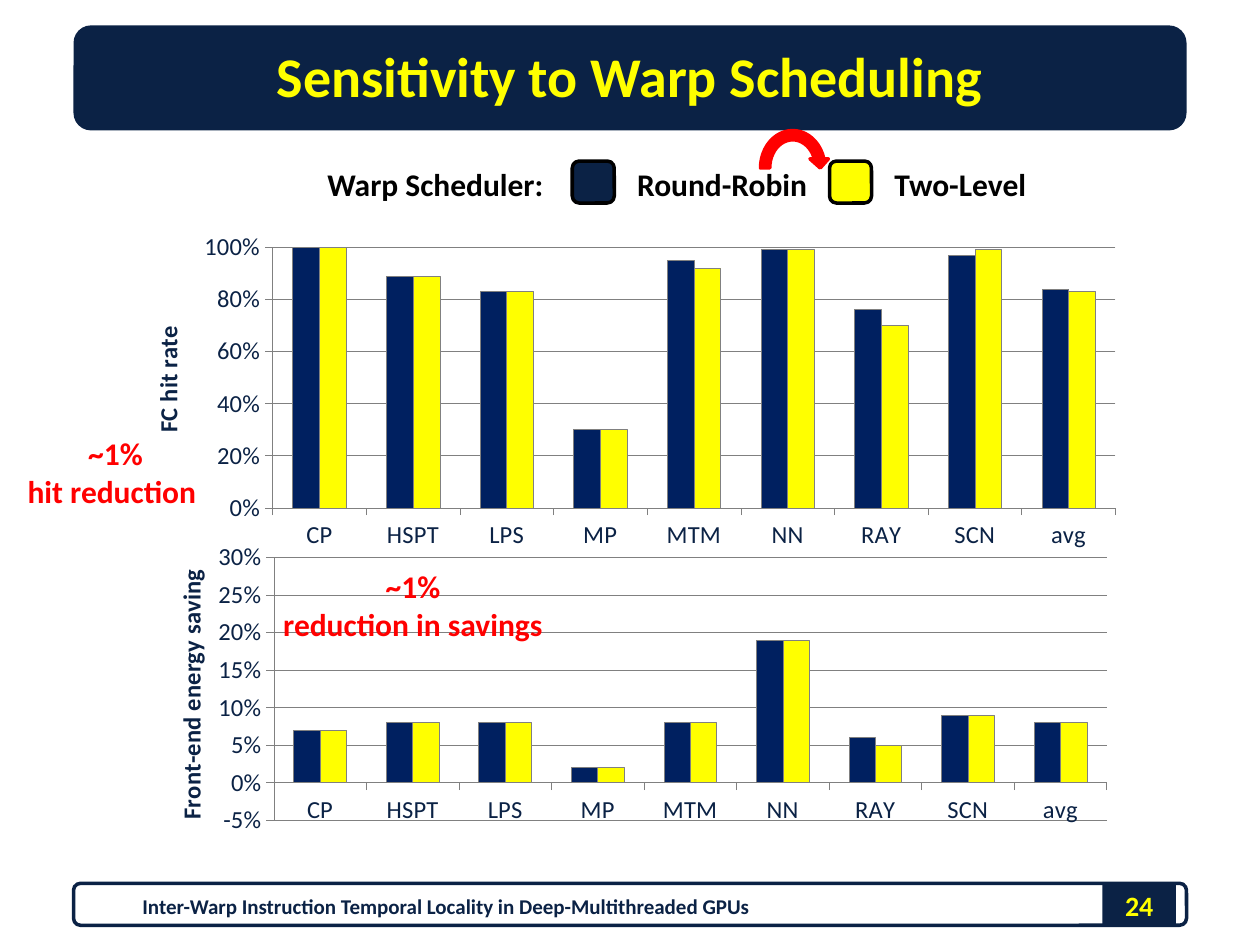
from lxml import etree
from pptx import Presentation
from pptx.chart.data import CategoryChartData
from pptx.dml.color import RGBColor
from pptx.enum.chart import XL_CHART_TYPE as ChartType, XL_TICK_MARK as TickMark
from pptx.enum.shapes import MSO_SHAPE as Shape
from pptx.enum.text import MSO_ANCHOR as Anchor, PP_ALIGN as Align
from pptx.oxml import parse_xml
from pptx.oxml.ns import nsdecls, qn
from pptx.util import Pt

NAVY, YELLOW, RED, BLACK = "0B2245", "FFFF00", "FF0000", "000000"
BAR_COLORS = ("002060", YELLOW)
GRAY = "808080"
FONT = "Calibri"
BENCHMARKS = ("CP", "HSPT", "LPS", "MP", "MTM", "NN", "RAY", "SCN", "avg")

HIT_RATE = {
    "title": "FC hit rate",
    "title_place": (0.01, 0.28),
    "scale": {"minimum_scale": 0, "maximum_scale": 1, "major_unit": 0.2},
    "plot": (0.139, 0.051, 0.861, 0.801),
    "values": ((1, 0.89, 0.83, 0.3, 0.95, 0.99, 0.76, 0.97, 0.84),
               (1, 0.89, 0.83, 0.3, 0.92, 0.99, 0.7, 0.99, 0.83)),
}
ENERGY_SAVING = {
    "title": "Front-end energy saving",
    "title_place": (0.02, 0.07),
    "scale": {"minimum_scale": -0.05, "maximum_scale": 0.3, "major_unit": 0.05},
    "plot": (0.129, 0.046, 0.871, 0.807),
    "values": ((0.07, 0.08, 0.08, 0.02, 0.08, 0.19, 0.06, 0.09, 0.08),
               (0.07, 0.08, 0.08, 0.02, 0.08, 0.19, 0.05, 0.09, 0.08)),
}


def color(value):
    return RGBColor.from_string(value)


def points(box):
    return [Pt(length) for length in box]


def set_font(font, size, tint, bold=True):
    values = {"name": FONT, "size": Pt(size), "bold": bold}
    for name, value in values.items():
        setattr(font, name, value)
    font.color.rgb = color(tint)


def set_line(line, tint, width):
    line.color.rgb = color(tint)
    line.width = Pt(width)


def add_block(page, kind, box, fill=None, line=None):
    block = page.shapes.add_shape(kind, *points(box))
    block.shadow.inherit = False
    if fill:
        block.fill.solid()
        block.fill.fore_color.rgb = color(fill)
    else:
        block.fill.background()
    if line:
        set_line(block.line, line, 2)
    else:
        block.line.fill.background()
    return block


def add_text(page, box, lines, size, tint, align=Align.LEFT, anchor=Anchor.TOP, wrap=False):
    frame = page.shapes.add_textbox(*points(box)).text_frame
    frame.word_wrap = wrap
    frame.vertical_anchor = anchor
    for index, line in enumerate(lines):
        para = frame.paragraphs[0] if index == 0 else frame.add_paragraph()
        para.alignment = align
        span = para.add_run()
        span.text = line
        set_font(span.font, size, tint)


def add_header(page, box):
    left, top, width, height = box
    add_block(page, Shape.ROUNDED_RECTANGLE, box, NAVY)
    add_text(page, (left - 6, top - 2.5, width + 12, height + 2),
             ["Sensitivity to Warp Scheduling"], 32, YELLOW,
             Align.CENTER, Anchor.MIDDLE, True)


def add_footer(page, box):
    left, top, width, height = box
    number_left = left + width - 48
    add_block(page, Shape.RECTANGLE, (number_left, top - 0.5, 42, height), NAVY)
    add_block(page, Shape.ROUNDED_RECTANGLE, box, line=NAVY)
    add_text(page, (number_left - 6, top - 2, 54, 29), ["24"], 16, YELLOW,
             Align.CENTER, Anchor.MIDDLE, True)
    add_text(page, (left + 12, top - 1.5, 402, 29),
             ["Inter-Warp Instruction Temporal Locality in Deep-Multithreaded GPUs"],
             12, NAVY, Align.CENTER, Anchor.MIDDLE, True)


def add_legend(page, box):
    left, top, width, height = box
    add_text(page, (left, top, 139, height), ["Warp Scheduler:"], 18, BLACK)
    entries = ((147, NAVY, "Round-Robin", 112), (294, YELLOW, "Two-Level", 90))
    for offset, fill, label, label_width in entries:
        add_block(page, Shape.ROUNDED_RECTANGLE,
                  (left + offset, top + 1.5, 24, 24), fill, BLACK)
        add_text(page, (left + offset + 30, top, label_width, height), [label], 18, BLACK)


def make_layout(settings):
    layout = parse_xml(f"<c:layout {nsdecls('c')}/>")
    manual = etree.SubElement(layout, qn("c:manualLayout"))
    for name, value in settings:
        etree.SubElement(manual, qn(f"c:{name}")).set("val", str(value))
    return layout


def replace_layout(parent, layout, position):
    for old in parent.findall(qn("c:layout")):
        parent.remove(old)
    parent.insert(position, layout)


def add_bar_chart(page, box, content):
    data = CategoryChartData(number_format="0%")
    data.categories = BENCHMARKS
    for index, values in enumerate(content["values"], 1):
        data.add_series(f"Series {index}", values)
    chart = page.shapes.add_chart(ChartType.COLUMN_CLUSTERED, *points(box), data).chart
    chart.has_legend = False
    chart.has_title = False
    set_font(chart.font, 14, NAVY, False)
    edges = [("xMode", "edge"), ("yMode", "edge")]
    replace_layout(chart._chartSpace.chart.plotArea, make_layout(
        [("layoutTarget", "inner"), *edges, *zip("xywh", content["plot"])]), 0)

    # Bars
    plot = chart.plots[0]
    for name, value in {"gap_width": 150, "overlap": 0, "vary_by_categories": False}.items():
        setattr(plot, name, value)
    for series, fill in zip(plot.series, BAR_COLORS):
        series.invert_if_negative = False
        series.format.fill.solid()
        series.format.fill.fore_color.rgb = color(fill)
        set_line(series.format.line, GRAY, 0.25)

    # Axes
    value_axis = chart.value_axis
    for axis in (chart.category_axis, value_axis):
        axis.major_tick_mark = TickMark.OUTSIDE
        axis.minor_tick_mark = TickMark.NONE
        set_line(axis.format.line, GRAY, 0.25)
    for name, value in content["scale"].items():
        setattr(value_axis, name, value)
    value_axis.has_major_gridlines = True
    set_line(value_axis.major_gridlines.format.line, GRAY, 0.25)
    value_axis.tick_labels.number_format = "0%"
    value_axis.tick_labels.number_format_is_linked = False

    # Axis title
    title = value_axis.axis_title
    title.text_frame.text = content["title"]
    set_font(title.text_frame.paragraphs[0].runs[0].font, 14, NAVY)
    replace_layout(title._element, make_layout(
        [*edges, *zip("xy", content["title_place"])]), 1)


def main():
    deck = Presentation()
    deck.slide_width, deck.slide_height = Pt(720), Pt(540)
    page = deck.slides.add_slide(deck.slide_layouts[6])

    add_footer(page, (42, 504.75, 636, 24))
    add_header(page, (42, 14.5, 636, 60))

    # Charts
    add_bar_chart(page, (78, 131.75, 559.5, 186), HIT_RATE)
    add_bar_chart(page, (86, 309.75, 546.5, 186.5), ENERGY_SAVING)

    add_legend(page, (180, 90.5, 414, 29))

    # Callouts and arrow between the two schedulers
    add_text(page, (8, 244.5, 116, 51), ["~1%", "hit reduction "], 18, RED, Align.CENTER)
    add_text(page, (154, 320.75, 164, 51), ["~1%", "reduction in savings"], 18, RED, Align.CENTER)
    add_block(page, Shape.CIRCULAR_ARROW, (432, 72, 42, 48), RED, RED)

    deck.save("out.pptx")


if __name__ == "__main__":
    main()
